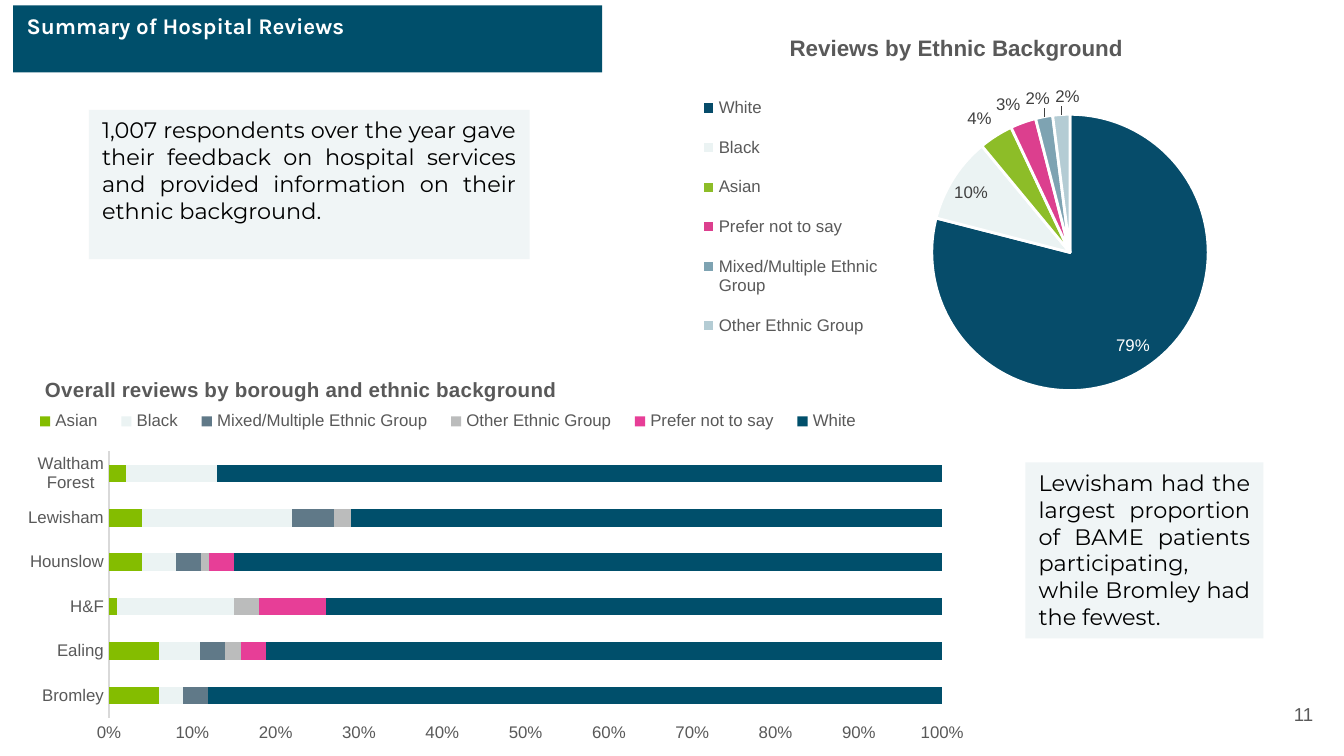
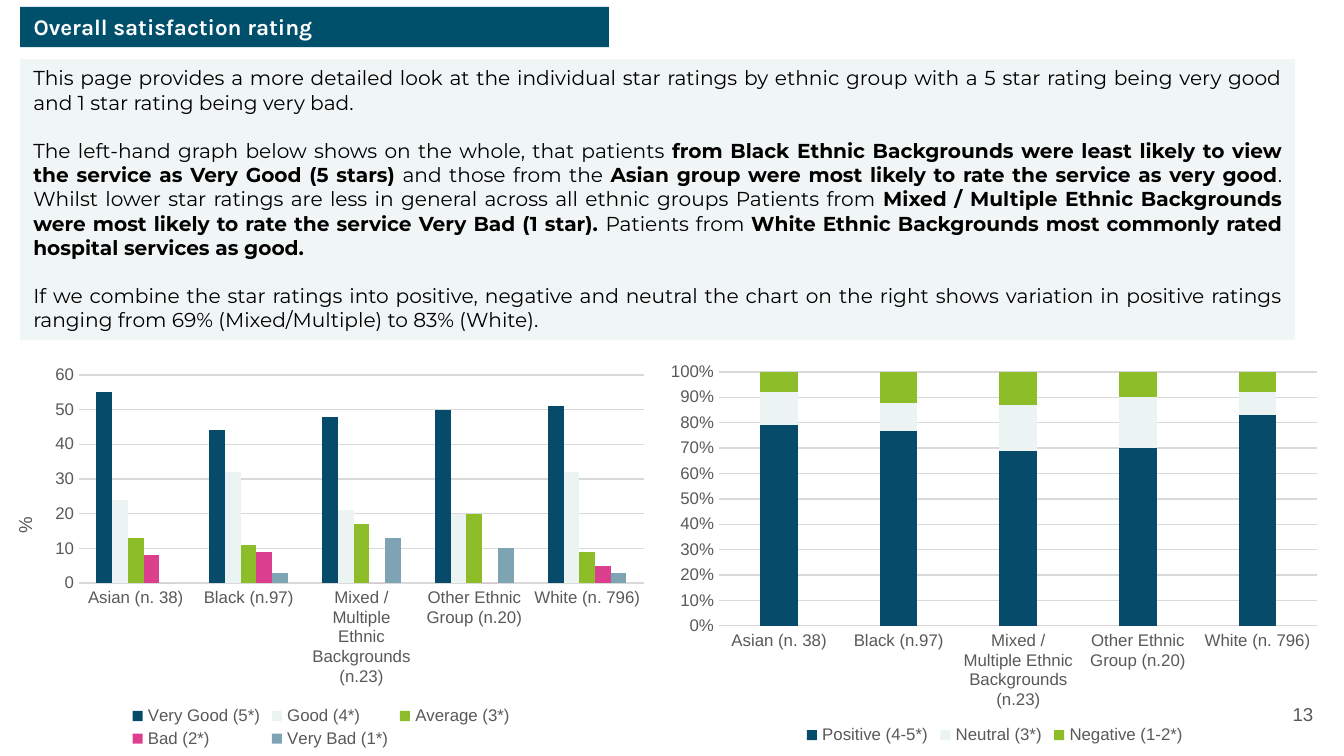
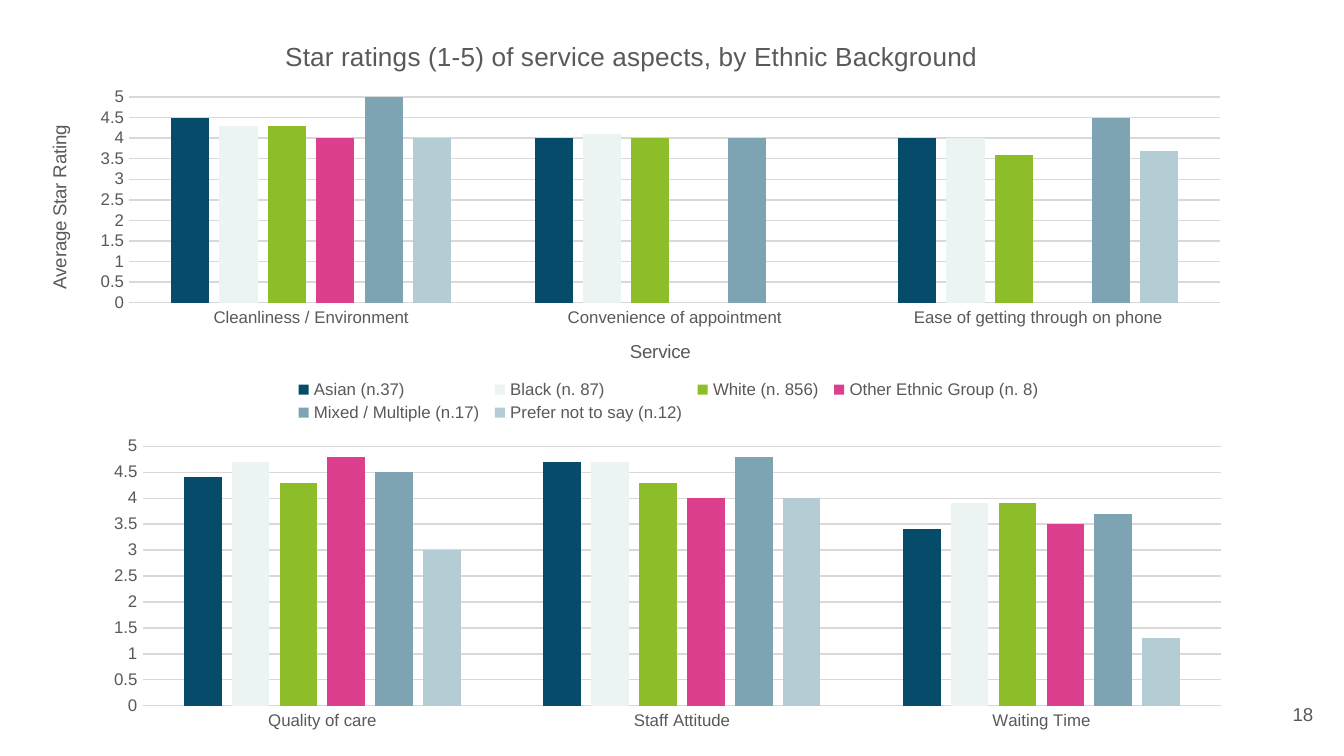
from pptx import Presentation
from pptx.chart.data import CategoryChartData
from pptx.dml.color import RGBColor
from pptx.enum.chart import XL_CHART_TYPE as Kind
from pptx.enum.chart import XL_LABEL_POSITION as Spot
from pptx.enum.chart import XL_LEGEND_POSITION as Side
from pptx.enum.chart import XL_TICK_MARK as Tick
from pptx.enum.shapes import MSO_SHAPE as Shape
from pptx.enum.text import MSO_ANCHOR as Anchor
from pptx.enum.text import MSO_AUTO_SIZE as Fit
from pptx.enum.text import PP_ALIGN as Align
from pptx.oxml import parse_xml
from pptx.oxml.ns import nsdecls, qn
from pptx.util import Cm, Pt

WHITE = RGBColor(0xFF, 0xFF, 0xFF)
BLACK = RGBColor(0x00, 0x00, 0x00)
TEAL = RGBColor(0x00, 0x4F, 0x6B)
PANEL = RGBColor(0xF0, 0xF5, 0xF6)
GREY = RGBColor(0x59, 0x59, 0x59)
DARK = RGBColor(0x40, 0x40, 0x40)
RULE = RGBColor(0xD9, 0xD9, 0xD9)
NAVY = RGBColor(0x06, 0x4C, 0x6A)
PALE = RGBColor(0xEB, 0xF3, 0xF3)
LEAF = RGBColor(0x8D, 0xBD, 0x28)
PINK = RGBColor(0xDC, 0x3F, 0x8E)
STEEL = RGBColor(0x7E, 0xA3, 0xB2)
MIST = RGBColor(0xB4, 0xCC, 0xD4)
LIME = RGBColor(0x84, 0xBD, 0x00)
SLATE = RGBColor(0x60, 0x79, 0x88)
SILVER = RGBColor(0xBB, 0xBC, 0xBC)
ROSE = RGBColor(0xE7, 0x3E, 0x97)

HUES = [NAVY, PALE, LEAF, PINK, STEEL, MIST]
ETHNIC = ["Asian (n. 38)", "Black (n.97)", "Mixed / Multiple Ethnic Backgrounds (n.23)",
          "Other Ethnic Group (n.20)", "White (n. 796)"]


def cms(box):
    return [Cm(v) for v in box]


def style(font, size, color=GREY, name="Arial", bold=False):
    font.name = name
    font.size = Pt(size)
    font.color.rgb = color
    font.bold = bold


def add_band(slide, text, box):
    title = slide.shapes.title
    title.left, title.top, title.width, title.height = cms(box)
    title.fill.solid()
    title.fill.fore_color.rgb = TEAL
    frame = title.text_frame
    frame.text = text
    frame.auto_size = Fit.NONE
    frame.vertical_anchor = Anchor.TOP
    para = frame.paragraphs[0]
    para.alignment = Align.LEFT
    style(para.font, 12, WHITE, "Karla", True)


def add_panel(slide, box, paras, size=12):
    panel = slide.shapes.add_shape(Shape.RECTANGLE, *cms(box))
    panel.shadow.inherit = False
    panel.fill.solid()
    panel.fill.fore_color.rgb = PANEL
    panel.line.fill.background()
    frame = panel.text_frame
    frame.word_wrap = True
    frame.vertical_anchor = Anchor.TOP
    for i, parts in enumerate(paras):
        para = frame.add_paragraph() if i else frame.paragraphs[0]
        para.alignment = Align.JUSTIFY
        para.space_before = Pt(13 if i else 0)
        style(para.font, size, BLACK, "Montserrat")
        for j, part in enumerate(parts):
            run = para.add_run()
            run.text = part
            if j % 2:
                run.font.bold = True


def add_page(slide, num):
    frame = slide.shapes.add_textbox(*cms((23.55, 12.95, 1.52, 1.09))).text_frame
    frame.word_wrap = True
    frame.vertical_anchor = Anchor.MIDDLE
    frame.margin_top = frame.margin_bottom = Cm(0.25)
    para = frame.paragraphs[0]
    para.text = str(num)
    para.alignment = Align.RIGHT
    style(para.font, 10)


def place(node, spot, inner=False):
    old = node.find(qn("c:layout"))
    if old is not None:
        node.remove(old)
    target = '<c:layoutTarget val="inner"/>' if inner else ""
    modes = '<c:xMode val="edge"/><c:yMode val="edge"/>'
    sizes = "".join(f'<c:{k} val="{v}"/>' for k, v in zip("xywh", spot))
    layout = parse_xml(f'<c:layout {nsdecls("c")}><c:manualLayout>{target}{modes}{sizes}'
                       '</c:manualLayout></c:layout>')
    over = node.find(qn("c:overlay"))
    if over is None:
        node.insert(0, layout)
    else:
        over.addprevious(layout)


def add_chart(slide, kind, box, cats, rows, area, fmt="General"):
    data = CategoryChartData(number_format=fmt)
    data.categories = cats
    for name, vals in rows:
        data.add_series(name, vals)
    chart = slide.shapes.add_chart(kind, *cms(box), data).chart
    style(chart.font, 10, BLACK)
    chart.has_title = False
    chart.has_legend = False
    place(chart._chartSpace.chart.plotArea, area, True)
    return chart


def add_head(chart, text, size, bold=False, spot=None):
    frame = chart.chart_title.text_frame
    frame.text = text
    style(frame.paragraphs[0].font, size, bold=bold)
    if spot:
        place(chart.chart_title._element, spot)


def add_key(chart, side, spot):
    chart.has_legend = True
    key = chart.legend
    key.position = side
    key.include_in_layout = False
    style(key.font, 9)
    place(key._element, spot)


def name_axis(axis, text):
    frame = axis.axis_title.text_frame
    frame.text = text
    style(frame.paragraphs[0].font, 10)


def add_bars(slide, kind, box, cats, rows, area, hues=HUES, gap=219, lap=0,
             fmt="General", grid=True, top=None, step=None):
    chart = add_chart(slide, kind, box, cats, rows, area)
    plot = chart.plots[0]
    plot.gap_width = gap
    plot.overlap = lap
    plot.vary_by_categories = False
    for row, hue in zip(plot.series, hues):
        row.format.fill.solid()
        row.format.fill.fore_color.rgb = hue
        row.invert_if_negative = False
    base, scale = chart.category_axis, chart.value_axis
    for axis in (base, scale):
        axis.major_tick_mark = axis.minor_tick_mark = Tick.NONE
        style(axis.tick_labels.font, 9)
    base.format.line.color.rgb = RULE
    base.format.line.width = Pt(0.75)
    scale.format.line.fill.background()
    scale.tick_labels.number_format = fmt
    scale.tick_labels.number_format_is_linked = False
    scale.minimum_scale = 0
    scale.maximum_scale = top
    scale.major_unit = step
    scale.has_major_gridlines = grid
    if grid:
        line = scale.major_gridlines.format.line
        line.color.rgb = RULE
        line.width = Pt(0.75)
    return chart


def add_pie(slide, box, cats, vals, area):
    chart = add_chart(slide, Kind.PIE, box, cats, [("Series 1", vals)], area, "0%")
    plot = chart.plots[0]
    plot.vary_by_categories = True
    row = plot.series[0]
    for i, hue in enumerate(HUES):
        look = row.points[i].format
        look.fill.solid()
        look.fill.fore_color.rgb = hue
        look.line.color.rgb = WHITE
        look.line.width = Pt(1.5)
    labels = row.data_labels
    labels.show_value = True
    labels.number_format = "0%"
    labels.number_format_is_linked = False
    labels.position = Spot.BEST_FIT
    style(labels.font, 9, DARK)
    first = row.points[0].data_label
    style(first.font, 9, WHITE)
    first.position = Spot.INSIDE_END
    return chart


def show_reviews(slide):
    add_band(slide, "Summary of Hospital Reviews", (0.25, 0.1, 11.13, 1.27))
    add_panel(slide, (1.68, 2.08, 8.33, 2.82), [[
        "1,007 respondents over the year gave their feedback on hospital services "
        "and provided information on their ethnic background."]])
    add_panel(slide, (19.38, 8.74, 4.5, 3.33), [[
        "Lewisham had the largest proportion of BAME patients participating, "
        "while Bromley had the fewest."]])
    pie = add_pie(slide, (12.27, 0.28, 11.61, 7.49),
                  ["White", "Black", "Asian", "Prefer not to say",
                   "Mixed/Multiple Ethnic Group", "Other Ethnic Group"],
                  [0.79, 0.1, 0.04, 0.03, 0.02, 0.02], (0.46, 0.25, 0.45, 0.7))
    add_head(pie, "Reviews by Ethnic Background", 12, True)
    add_key(pie, Side.LEFT, (0.06, 0.16, 0.34, 0.7))
    bars = add_bars(slide, Kind.BAR_STACKED_100, (0.23, 6.65, 18.31, 7.52),
                    ["Bromley", "Ealing", "H&F", "Hounslow", "Lewisham", "Waltham Forest"],
                    [("Asian", [6, 6, 1, 4, 4, 2]),
                     ("Black", [3, 5, 14, 4, 18, 11]),
                     ("Mixed/Multiple Ethnic Group", [3, 3, None, 3, 5, None]),
                     ("Other Ethnic Group", [None, 2, 3, 1, 2, None]),
                     ("Prefer not to say", [None, 3, 8, 3, None, None]),
                     ("White", [89, 82, 74, 85, 71, 87])],
                    (0.1, 0.25, 0.86, 0.67), [LIME, PALE, SLATE, SILVER, ROSE, TEAL],
                    gap=150, lap=100, fmt="0%", grid=False, top=1, step=0.1)
    add_head(bars, "Overall reviews by borough and ethnic background", 11, True, (0.03, 0.05))
    add_key(bars, Side.TOP, (0.01, 0.14, 0.88, 0.07))
    add_page(slide, 11)


def show_rating(slide):
    add_band(slide, "Overall satisfaction rating", (0.38, 0.13, 11.13, 0.76))
    add_panel(slide, (0.38, 1.12, 24.1, 5.31), [
        ["This page provides a more detailed look at the individual star ratings by ethnic "
         "group with a 5 star rating being very good and 1 star rating being very bad."],
        ["The left-hand graph below shows on the whole, that patients ",
         "from Black Ethnic Backgrounds were least likely to view the service as "
         "Very Good (5 stars)",
         " and those from the ",
         "Asian group were most likely to rate the service as very good",
         ". Whilst lower star ratings are less in general across all ethnic groups "
         "Patients from ",
         "Mixed / Multiple Ethnic Backgrounds were most likely to rate the service "
         "Very Bad (1 star). ",
         "Patients from ",
         "White Ethnic Backgrounds most commonly rated hospital services as good."],
        ["If we combine the star ratings into positive, negative and neutral the chart on "
         "the right shows variation in positive ratings ranging from 69% (Mixed/Multiple) "
         "to 83% (White)."]], 10.8)
    groups = add_bars(slide, Kind.COLUMN_STACKED_100, (12.45, 6.65, 12.7, 7.62), ETHNIC,
                      [("Positive (4-5*)", [79, 76, 69, 70, 83]),
                       ("Neutral (3*)", [13, 11, 18, 20, 9]),
                       ("Negative (1-2*)", [8, 12, 13, 10, 8])],
                      (0.09, 0.05, 0.89, 0.63), lap=100, fmt="0%", top=1, step=0.1)
    add_key(groups, Side.BOTTOM, (0.21, 0.93, 0.58, 0.06))
    stars = add_bars(slide, Kind.COLUMN_CLUSTERED, (-0.28, 6.71, 12.7, 7.57), ETHNIC,
                     [("Very Good (5*)", [55, 44, 48, 50, 51]),
                      ("Good (4*)", [24, 32, 21, 20, 32]),
                      ("Average (3*)", [13, 11, 17, 20, 9]),
                      ("Bad (2*)", [8, 9, 0, 0, 5]),
                      ("Very Bad (1*)", [0, 3, 13, 10, 3])],
                     (0.14, 0.05, 0.84, 0.52), top=60, step=10)
    name_axis(stars.value_axis, "%")
    add_key(stars, Side.BOTTOM, (0.21, 0.87, 0.58, 0.12))
    add_page(slide, 13)


def show_aspects(slide):
    upper = add_bars(slide, Kind.COLUMN_CLUSTERED, (0.36, 0.36, 23.16, 7.77),
                     ["Cleanliness / Environment", "Convenience of appointment",
                      "Ease of getting through on phone"],
                     [("Asian (n.37)", [4.5, 4, 4]),
                      ("Black (n. 87)", [4.3, 4.1, 4]),
                      ("White (n. 856)", [4.3, 4, 3.6]),
                      ("Other Ethnic Group (n. 8)", [4, None, None]),
                      ("Mixed / Multiple (n.17)", [5, 4, 4.5]),
                      ("Prefer not to say (n.12)", [4, None, 3.7])],
                     (0.09, 0.19, 0.89, 0.5), lap=-27, top=5, step=0.5)
    add_head(upper, "Star ratings (1-5) of service aspects, by Ethnic Background", 14)
    name_axis(upper.category_axis, "Service")
    name_axis(upper.value_axis, "Average Star Rating")
    add_key(upper, Side.BOTTOM, (0.22, 0.87, 0.62, 0.12))
    lower = [[4.4, 4.7, 3.4], [4.7, 4.7, 3.9], [4.3, 4.3, 3.9],
             [4.8, 4, 3.5], [4.5, 4.8, 3.7], [3, 4, 1.3]]
    add_bars(slide, Kind.COLUMN_CLUSTERED, (1.6, 8.15, 21.92, 5.77),
             ["Quality of care", "Staff Attitude", "Waiting Time"],
             [(f"Series {i}", vals) for i, vals in enumerate(lower, 1)],
             (0.05, 0.05, 0.93, 0.85), lap=-27, top=5, step=0.5)
    add_page(slide, 18)


def main():
    deck = Presentation()
    deck.slide_width, deck.slide_height = Cm(25.4), Cm(14.29)
    titled, blank = deck.slide_layouts[5], deck.slide_layouts[6]
    show_reviews(deck.slides.add_slide(titled))
    show_rating(deck.slides.add_slide(titled))
    show_aspects(deck.slides.add_slide(blank))
    deck.save("out.pptx")


if __name__ == "__main__":
    main()
